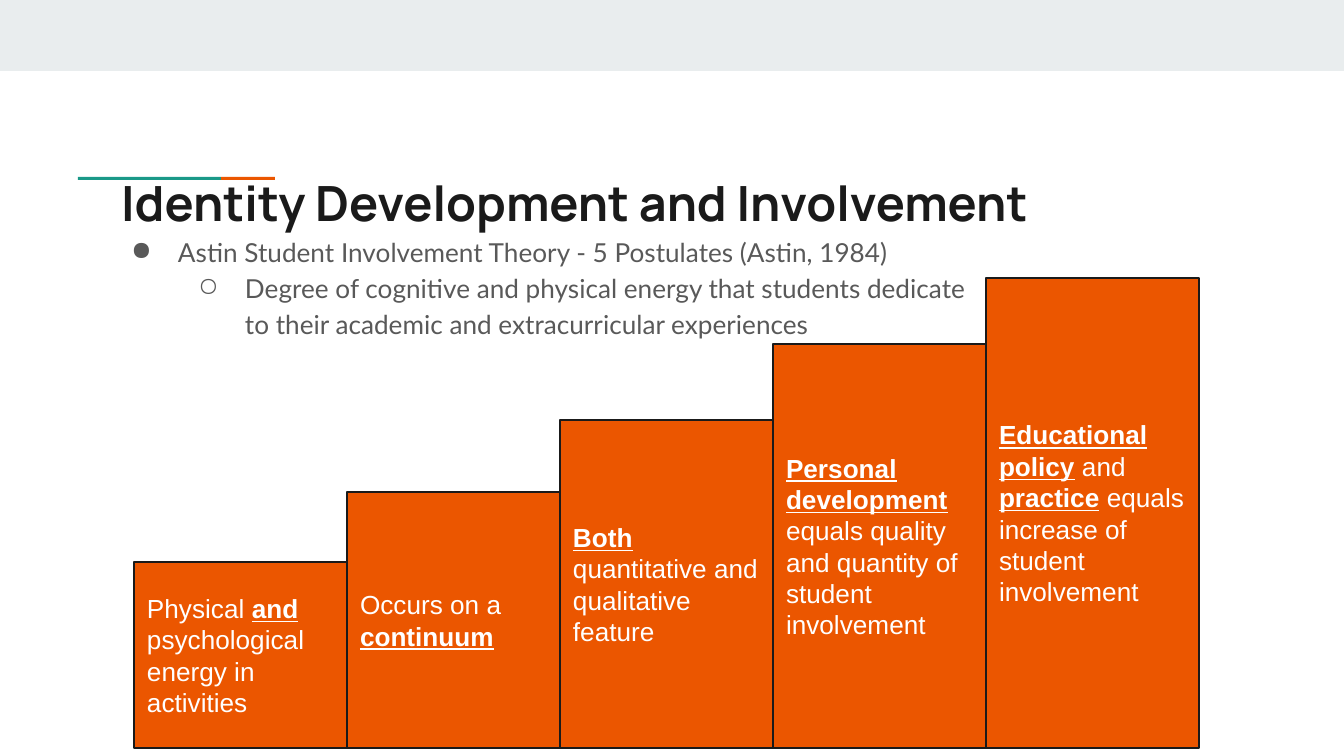
from dataclasses import dataclass

from lxml import etree
from pptx import Presentation
from pptx.dml.color import RGBColor
from pptx.enum.shapes import MSO_SHAPE
from pptx.enum.text import MSO_ANCHOR, MSO_AUTO_SIZE, PP_ALIGN
from pptx.oxml.ns import qn
from pptx.util import Emu, Pt

RECT = MSO_SHAPE.RECTANGLE
TOP, MIDDLE = MSO_ANCHOR.TOP, MSO_ANCHOR.MIDDLE
LEFT = PP_ALIGN.LEFT
FIXED = MSO_AUTO_SIZE.NONE
PX = 914400 / 134.4


@dataclass(frozen=True)
class Theme:
    band: str = "E9EDEE"
    teal: str = "1A9988"
    orange: str = "EB5600"
    ink: str = "1A1A1A"
    gray: str = "595959"
    white: str = "FFFFFF"
    head: int = 26
    text: int = 14
    edge: float = 0.75


theme = Theme()


def scale(*sizes):
    return [Emu(round(size * PX)) for size in sizes]


def style(run, face, size, color, bold=False):
    run.font.name = face
    run.font.size = Pt(size)
    run.font.color.rgb = RGBColor.from_string(color)
    run.font.bold = bold


deck = Presentation()
deck.slide_width, deck.slide_height = scale(1344, 756)
slide = deck.slides.add_slide(deck.slide_layouts[5])
shapes = slide.shapes

strips = [
    (0, 0, 1344, 71, theme.band),
    (78, 177, 143, 3, theme.teal),
    (221, 177, 54, 3, theme.orange),
]
for *box, color in strips:
    strip = shapes.add_shape(RECT, *scale(*box))
    strip.shadow.inherit = False
    strip.fill.solid()
    strip.fill.fore_color.rgb = RGBColor.from_string(color)
    strip.line.fill.background()

title = shapes.title
title.left, title.top, title.width, title.height = scale(108, 160, 1130, 79)
title.text_frame.text = "Identity Development and Involvement"
title.text_frame.paragraphs[0].alignment = LEFT
style(title.text_frame.paragraphs[0].runs[0], "Manrope", theme.head, theme.ink, True)

body = shapes.add_textbox(*scale(98, 219, 887, 128))
points = [
    ("●", "Astin Student Involvement Theory - 5 Postulates (Astin, 1984)"),
    ("○", "Degree of cognitive and physical energy that students dedicate "
          "to their academic and extracurricular experiences"),
]
body.text_frame.text = "\n".join(text for mark, text in points)
for level, (mark, text) in enumerate(points):
    para = body.text_frame.paragraphs[level]
    para.level = level
    para.line_spacing = 1.15
    style(para.runs[0], "Lato", theme.text, theme.gray)
    margin, indent = scale(67 * (level + 1), -47)
    props = para._p.get_or_add_pPr()
    props.set("marL", str(margin))
    props.set("indent", str(indent))
    tint = etree.SubElement(props, qn("a:buClr"))
    etree.SubElement(tint, qn("a:srgbClr"), val=theme.gray)
    etree.SubElement(props, qn("a:buChar"), char=mark)

frames = [(title.text_frame, TOP), (body.text_frame, TOP)]

steps = [
    (562, "Physical *and* psychological energy in activities"),
    (492, "Occurs on a *continuum*"),
    (420, "*Both* quantitative and qualitative feature"),
    (344, "*Personal development *equals quality and quantity of student involvement"),
    (278, "*Educational policy* and *practice* equals increase of student involvement"),
]
start, width, base = 134, 213, 748
for index, (top, text) in enumerate(steps):
    step = shapes.add_shape(RECT, *scale(start + index * width, top, width, base - top))
    step.shadow.inherit = False
    step.fill.solid()
    step.fill.fore_color.rgb = RGBColor.from_string(theme.orange)
    step.line.color.rgb = RGBColor.from_string(theme.ink)
    step.line.width = Pt(theme.edge)
    para = step.text_frame.paragraphs[0]
    para.alignment = LEFT
    for order, part in enumerate(text.split("*")):
        if part:
            strong = order % 2 == 1
            run = para.add_run()
            run.text = part
            style(run, "Arial", theme.text, theme.white, strong)
            run.font.underline = strong
    frames.append((step.text_frame, MIDDLE))

for frame, anchor in frames:
    frame.word_wrap = True
    frame.auto_size = FIXED
    frame.vertical_anchor = anchor
    pad, = scale(13)
    frame.margin_left = frame.margin_right = pad
    frame.margin_top = frame.margin_bottom = pad

deck.save("out.pptx")
